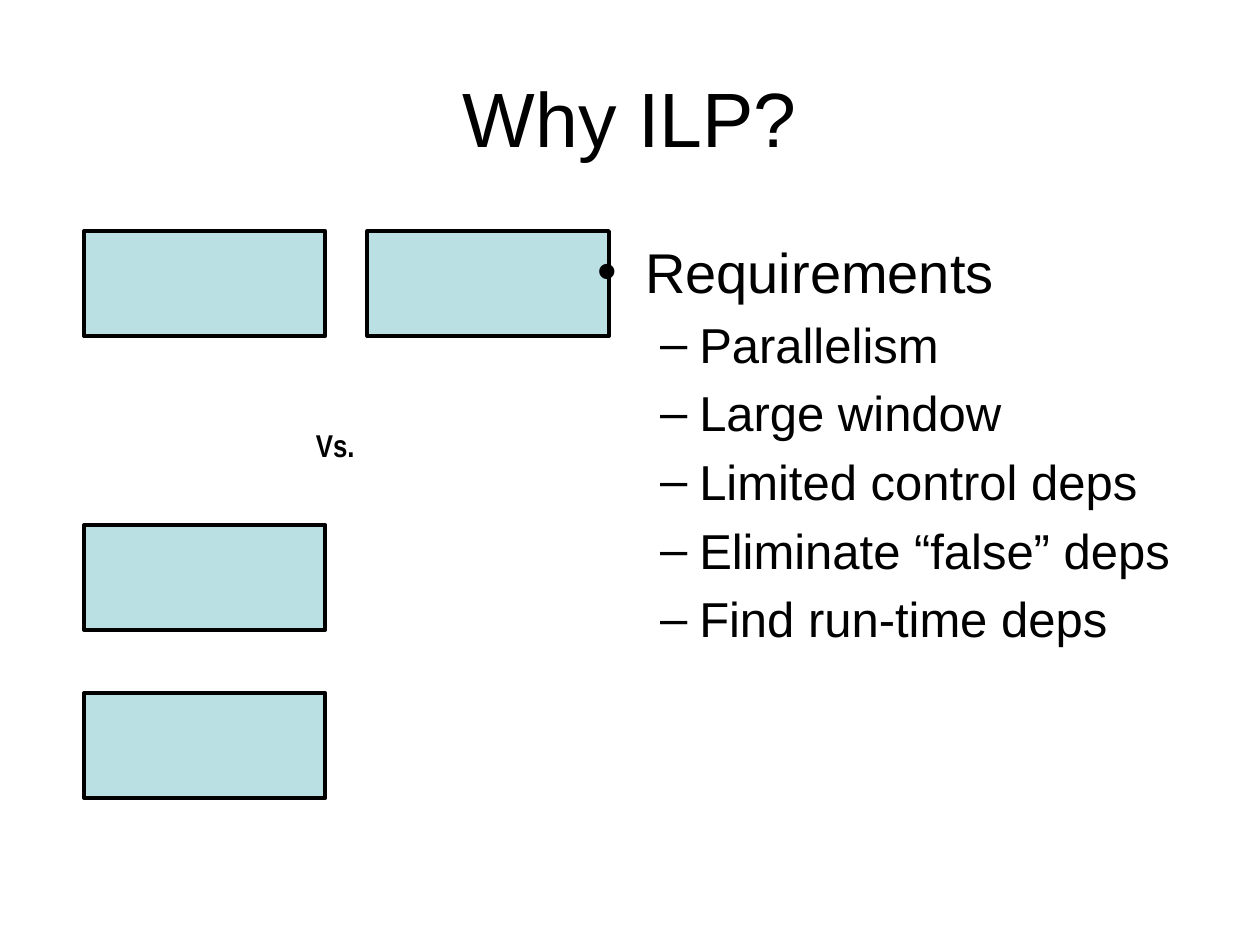
from lxml import etree
from pptx import Presentation, util as u
from pptx.dml.color import RGBColor
from pptx.enum import shapes, text
from pptx.oxml import ns

deck = Presentation()
deck.slide_width, deck.slide_height = u.Inches(10), u.Inches(7.5)
page = deck.slides.add_slide(deck.slide_layouts[6])
cell = deck.slide_width / 120


def grid(*cells):
    return [round(count * cell) for count in cells]


def write(para, words, size, font="Arial", color="000000", bold=False,
          align=None, bullet=None, indent=0, hang=0):
    para.alignment = align
    span = para.add_run()
    span.text = words
    span.font.name, span.font.size, span.font.bold = font, u.Pt(size), bold
    span.font.color.rgb = RGBColor.from_string(color)
    if bullet:
        props = para._p.get_or_add_pPr()
        props.set("marL", str(u.Inches(indent)))
        props.set("indent", str(u.Inches(-hang)))
        before = etree.SubElement(props, ns.qn("a:spcBef"))
        etree.SubElement(before, ns.qn("a:spcPct")).set("val", "20000")
        etree.SubElement(props, ns.qn("a:buFont")).set("typeface", font)
        etree.SubElement(props, ns.qn("a:buChar")).set("char", bullet)


title = page.shapes.add_textbox(*grid(6, 3.6, 108, 15)).text_frame
title.word_wrap = True
title.vertical_anchor = text.MSO_ANCHOR.MIDDLE
write(title.paragraphs[0], "Why ILP?", 44, align=text.PP_ALIGN.CENTER)

for column, row in [(8, 22), (35, 22), (8, 50), (8, 66)]:
    box = page.shapes.add_shape(shapes.MSO_SHAPE.RECTANGLE, *grid(column, row, 23, 10))
    box.shadow.inherit = False
    box.fill.solid()
    box.fill.fore_color.rgb = RGBColor.from_string("BBE0E3")
    box.line.color.rgb = RGBColor.from_string("000000")
    box.line.width = u.Pt(2.25)

versus = page.shapes.add_textbox(*grid(28.9, 40, 6.1, 4.8)).text_frame
versus.word_wrap = False
versus.auto_size = text.MSO_AUTO_SIZE.SHAPE_TO_FIT_TEXT
write(versus.paragraphs[0], "Vs.", 18, font="Arial Narrow", bold=True)

body = page.shapes.add_textbox(*grid(55.7, 22, 58.3, 58.4)).text_frame
body.word_wrap = True
write(body.paragraphs[0], "Requirements", 32, bullet="•", indent=0.38, hang=0.38)
for need in ["Parallelism", "Large window", "Limited control deps",
             "Eliminate “false” deps", "Find run-time deps"]:
    para = body.add_paragraph()
    para.level = 1
    write(para, need, 28, bullet="–", indent=0.81, hang=0.31)

deck.save("out.pptx")
